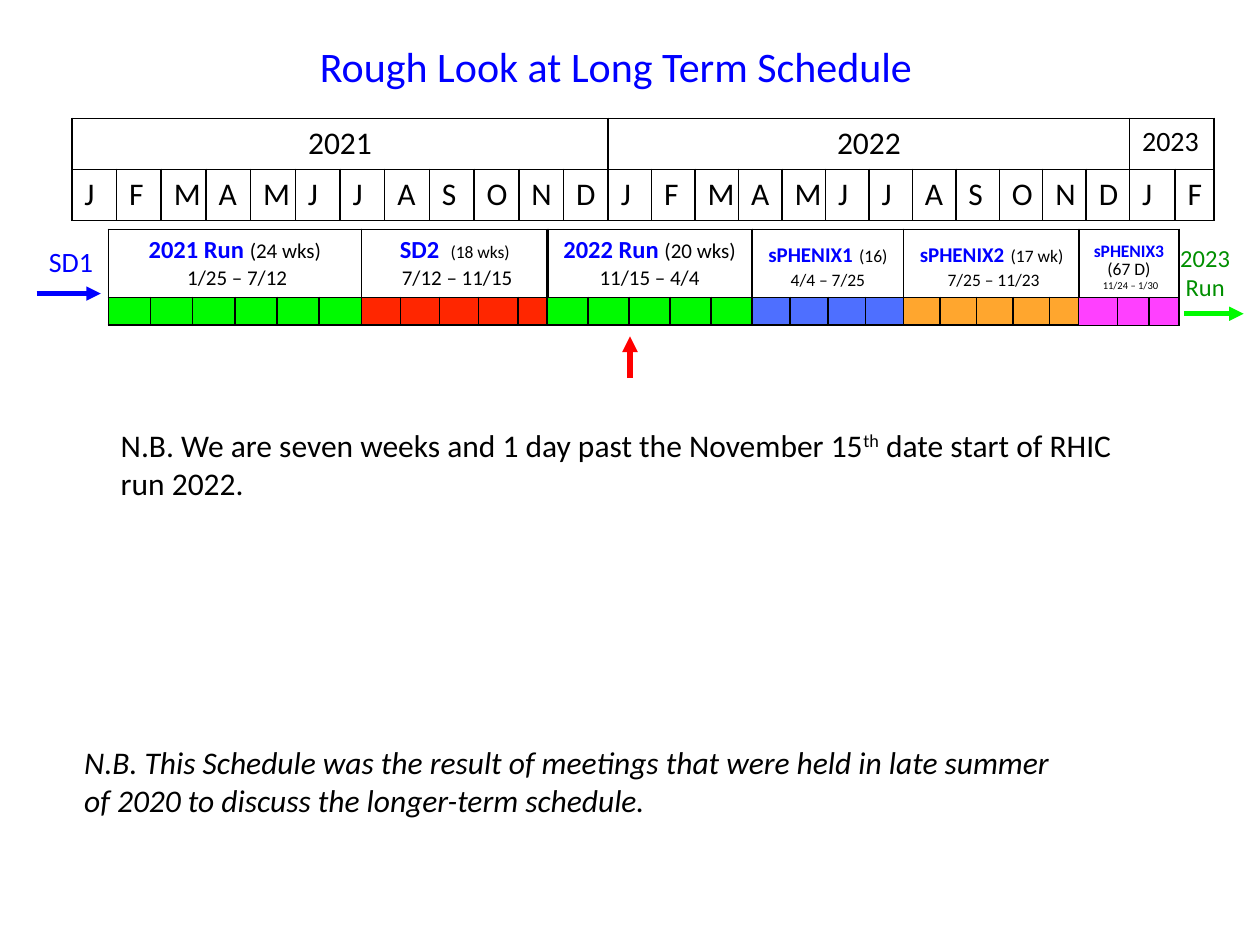
from lxml import etree
from pptx import Presentation
from pptx.dml.color import RGBColor
from pptx.enum.shapes import MSO_CONNECTOR
from pptx.enum.text import PP_ALIGN
from pptx.oxml.ns import qn
from pptx.util import Inches, Pt

LINE = MSO_CONNECTOR.STRAIGHT
LEFT, MID = PP_ALIGN.LEFT, PP_ALIGN.CENTER
FONT = "Calibri"
BLACK, BLUE, GREEN, RED = "000000", "0000FF", "00FA00", "FF0000"

# Grid: the calendar and the notes share the left edge
WIDE, HIGH = 10, 7.5
EDGE = 0.57
YEAR_ROW = 0.405
RUN_TOP = 1.82
RUN_ROWS = (0.54, 0.22)
MONTHS = "JFMAMJJASOND"


def color(code):
    return RGBColor.from_string(code)


def write(frame, paras, size=18, ink=BLACK, align=LEFT, space=None):
    """Each paragraph is a list of (text, format) runs."""
    for i, runs in enumerate(paras):
        para = frame.paragraphs[0] if i == 0 else frame.add_paragraph()
        para.alignment = align
        if space:
            para.line_spacing = space
        for text, form in runs:
            run = para.add_run()
            run.text = text
            font = run.font
            font.name = FONT
            font.size = Pt(form.get("size", size))
            font.bold = form.get("bold", False)
            font.italic = form.get("slant", False)
            font.color.rgb = color(form.get("ink", ink))
            if "lift" in form:
                run._r.get_or_add_rPr().set("baseline", str(form["lift"]))


def label(slide, box, paras, wrap=True, **form):
    frame = slide.shapes.add_textbox(*map(Inches, box)).text_frame
    frame.word_wrap = wrap
    write(frame, paras, **form)


def arrow(slide, start, end, ink, width=2.75):
    line = slide.shapes.add_connector(LINE, *map(Inches, start + end))
    line.line.color.rgb = color(ink)
    line.line.width = Pt(width)
    props = line._element.spPr
    etree.SubElement(props.find(qn("a:ln")), qn("a:tailEnd"), type="triangle")
    etree.SubElement(props, qn("a:effectLst"))


def paint(cell, fill=None, alpha=100):
    """Black border all round, then the fill."""
    props = cell._tc.get_or_add_tcPr()
    for side in ("lnL", "lnR", "lnT", "lnB"):
        edge = etree.SubElement(props, qn("a:" + side), w=str(Pt(1)))
        solid = etree.SubElement(edge, qn("a:solidFill"))
        etree.SubElement(solid, qn("a:srgbClr"), val=BLACK)
    if not fill:
        cell.fill.background()
        return
    cell.fill.solid()
    cell.fill.fore_color.rgb = color(fill)
    if alpha < 100:
        tint = props.find(qn("a:solidFill")).find(qn("a:srgbClr"))
        etree.SubElement(tint, qn("a:alpha"), val=str(alpha * 1000))


def grid(slide, left, top, cols, rows):
    box = map(Inches, (left, top, sum(cols), sum(rows)))
    table = slide.shapes.add_table(len(rows), len(cols), *box).table
    table.first_row = table.horz_banding = False
    for col, size in zip(table.columns, cols):
        col.width = Inches(size)
    for row, size in zip(table.rows, rows):
        row.height = Inches(size)
    return table


def months(slide):
    cols = [0.355] * 12 + [0.345] * 12 + [0.36, 0.31]
    table = grid(slide, EDGE, 0.94, cols, [YEAR_ROW] * 2)
    for cell in table.iter_cells():
        paint(cell)
    first = 0
    for year, span, size, align in (("2021", 12, 18, MID),
                                    ("2022", 12, 18, MID),
                                    ("2023", 2, 16, LEFT)):
        head = table.cell(0, first)
        head.merge(table.cell(0, first + span - 1))
        write(head.text_frame, [[(year, {})]], size=size, align=align)
        for i in range(span):
            write(table.cell(1, first + i).text_frame, [[(MONTHS[i], {})]])
        first += span


def bar(slide, left, cols, paras, fill, alpha=100, size=12, space=None):
    table = grid(slide, left, RUN_TOP, cols, RUN_ROWS)
    for cell in table.iter_cells():
        paint(cell)
    head = table.cell(0, 0)
    head.merge(table.cell(0, len(cols) - 1))
    write(head.text_frame, paras, size=size, align=MID, space=space)
    for i in range(len(cols)):
        cell = table.cell(1, i)
        cell._tc.remove(cell._tc.tcPr)
        paint(cell, fill, alpha)
        cell.margin_top = cell.margin_bottom = 0
        # An empty cell must not push its row taller
        tail = cell.text_frame.paragraphs[0]._p.get_or_add_endParaRPr()
        tail.set("sz", "800")


def name(text, size):
    return text, {"size": size, "bold": True, "ink": BLUE}


def runs(slide):
    gap = name(" ", 16)
    bars = (
        ([0.335] * 6,
         [[name("2021 Run ", 14), ("(24 wks)", {})], [(" 1/25 – 7/12", {})]],
         GREEN, {}),
        ([0.31] * 4 + [0.23],
         [[name("SD2  ", 14), ("(18 wks)", {"size": 10})],
          [(" 7/12 – 11/15", {})]],
         "FF2600", {}),
        ([0.326] * 5,
         [[name("2022 Run ", 14), ("(20 wks) 11/15 – 4/4", {})]],
         GREEN, {}),
        ([0.3] * 4,
         [[name("sPHENIX1", 12), gap, ("(16) 4/4 – 7/25", {})]],
         "0432FF", {"alpha": 70, "size": 10}),
        ([0.29] * 4 + [0.23],
         [[name("sPHENIX2", 12), gap, ("(17 wk)", {})],
          [(" 7/25 – 11/23", {})]],
         "FF9300", {"alpha": 82, "size": 10}),
        ([0.31, 0.25, 0.23],
         [[name("sPHENIX3", 10), gap, ("(67 D)", {})],
          [(" ", {"size": 8}), ("11/24 – 1/30", {"size": 6})]],
         "FF40FF", {"size": 10, "space": 0.78}),
    )
    # Each run starts where the one before it ends
    left = 0.86
    for cols, paras, fill, form in bars:
        bar(slide, left, cols, paras, fill, **form)
        left += sum(cols)


def main():
    deck = Presentation()
    deck.slide_width, deck.slide_height = Inches(WIDE), Inches(HIGH)
    slide = deck.slides.add_slide(deck.slide_layouts[6])

    # Title
    label(slide, (2.44, 0.27, 5.13, 0.5),
          [[("Rough Look at Long Term Schedule", {})]], size=24, ink=BLUE)

    # Calendar and runs
    months(slide)
    runs(slide)

    # What lies before and after
    label(slide, (0.29, 1.89, 0.56, 0.37), [[("SD1", {})]],
          wrap=False, size=16, ink=BLUE)
    arrow(slide, (0.29, 2.33), (0.8, 2.33), BLUE)
    label(slide, (9.2, 1.88, 0.73, 0.57), [[("2023", {})], [("Run", {})]],
          size=14, ink="008F00", align=MID)
    arrow(slide, (9.4, 2.49), (9.87, 2.49), GREEN)

    # Today
    arrow(slide, (WIDE / 2, 3), (WIDE / 2, 2.67), RED, width=3)

    # Notes
    label(slide, (0.86, 3.33, 8.09, 0.71),
          [[("N.B. We are seven weeks and 1 day past the November 15", {}),
            ("th", {"lift": 30000}),
            (" date start of RHIC run 2022.", {})]])
    label(slide, (EDGE, 5.85, 8.12, 0.71),
          [[("N.B. This Schedule was the result of meetings that were held "
             "in late summer of 2020 to discuss the longer-term schedule.",
             {"slant": True})]])

    deck.save("out.pptx")


if __name__ == "__main__":
    main()
